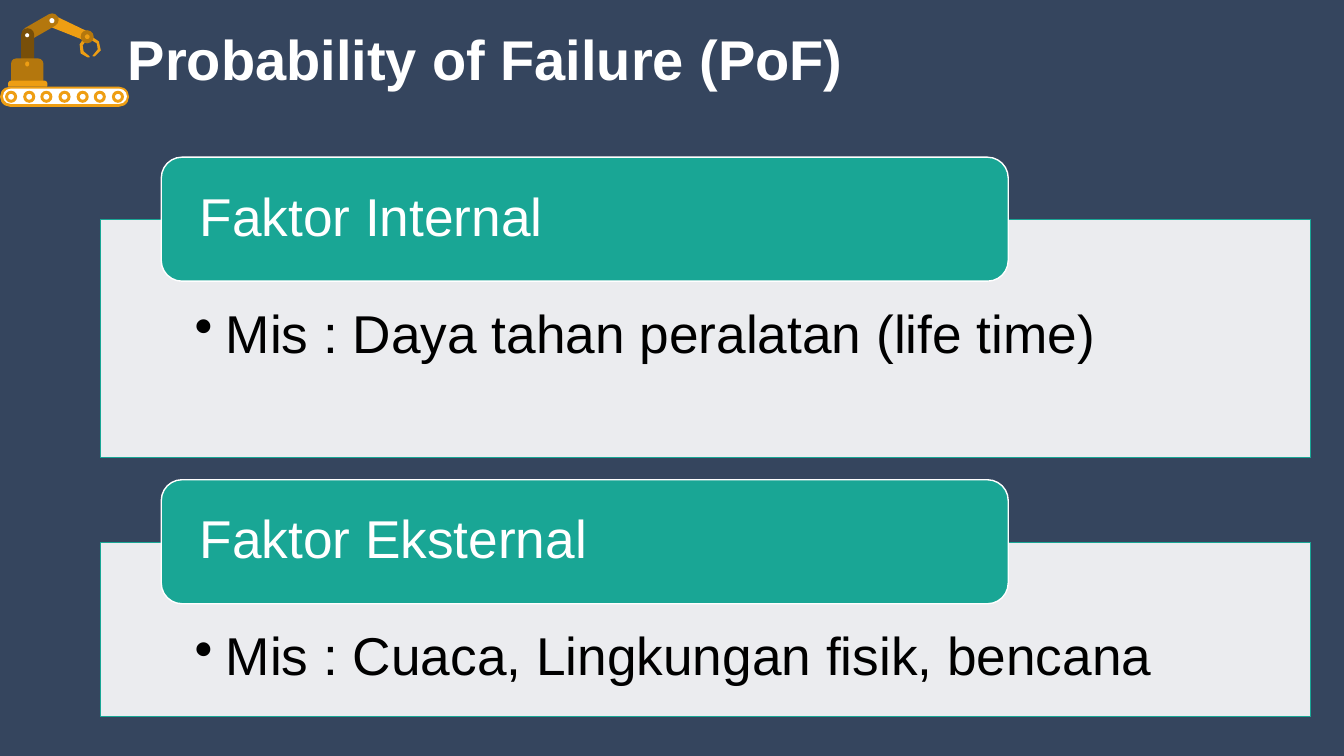
from dataclasses import dataclass

from lxml import etree
from pptx import Presentation
from pptx import util as u
from pptx.dml.color import RGBColor
from pptx.enum import shapes, text
from pptx.oxml.ns import qn
from pptx.shapes.autoshape import Shape
from pptx.shapes.shapetree import GroupShapes
from pptx.slide import Slide
from pptx.text.text import TextFrame

PX = 9144
FONT = "Arial"
NAVY, TEAL, WHITE, BLACK = "35455E", "19A695", "FFFFFF", "000000"
AMBER, BRONZE, BROWN = "EE9E13", "B4770D", "784F09"
Kind = shapes.MSO_SHAPE


@dataclass(frozen=True)
class Box:
    left: int
    top: int
    width: int
    height: int


@dataclass(frozen=True)
class Part:
    kind: Kind
    box: Box
    color: str
    adjustments: tuple[float, ...] = ()
    rotation: float = 0


@dataclass(frozen=True)
class Claw:
    points: tuple[tuple[int, int], ...]


@dataclass(frozen=True)
class Factor:
    heading: str
    example: str
    top: int
    panel_height: int


ARM = (
    Part(Kind.TRAPEZOID, Box(64, 8, 12, 42), AMBER, (0.12,), 113.7),
    Part(Kind.ROUNDED_RECTANGLE, Box(20, 20, 40, 13), BRONZE, (0.5,), 330),
    Part(Kind.OVAL, Box(49, 18, 5, 5), WHITE),
    Part(Kind.ROUND_2_SAME_RECTANGLE, Box(21, 28, 13, 39), BROWN, (0.5, 0)),
    Part(Kind.OVAL, Box(25, 33, 4, 4), WHITE),
)
CLAWS = (
    Claw(((92, 37), (98, 41), (100, 50), (94, 56), (92, 56),
          (92, 55), (97, 49), (96, 43), (91, 40))),
    Claw(((83, 38), (79, 44), (80, 53), (87, 57), (89, 57),
          (89, 56), (83, 51), (82, 45), (85, 41))),
)
BASE = (
    Part(Kind.DONUT, Box(80, 30, 13, 13), BRONZE, (0.31,)),
    Part(Kind.ROUND_2_SAME_RECTANGLE, Box(11, 58, 32, 25), BRONZE, (0.2, 0.08)),
    Part(Kind.ROUND_2_SAME_RECTANGLE, Box(8, 80, 39, 6), AMBER, (0.5, 0.15)),
    Part(Kind.OVAL, Box(25, 61, 4, 5), AMBER),
    Part(Kind.ROUNDED_RECTANGLE, Box(0, 86, 128, 20), AMBER, (0.5,)),
    Part(Kind.ROUNDED_RECTANGLE, Box(3, 88, 123, 15), WHITE, (0.5,)),
)
WHEELS = tuple(
    Part(Kind.DONUT, Box(round(5 + step * 106 / 6), 90, 12, 12), AMBER)
    for step in range(7)
)
FACTORS = (
    Factor("Faktor Internal", "Mis : Daya tahan peralatan (life time)", 156, 236),
    Factor("Faktor Eksternal", "Mis : Cuaca, Lingkungan fisik, bencana", 476, 173),
)


def rgb(color: str) -> RGBColor:
    return RGBColor.from_string(color)


def paint(shape: Shape, fill: str, line: str | None = None) -> None:
    shape.shadow.inherit = False
    shape.fill.solid()
    shape.fill.fore_color.rgb = rgb(fill)
    if line is None:
        shape.line.fill.background()
    else:
        shape.line.color.rgb = rgb(line)
        shape.line.width = u.Pt(1)


def add_part(tree: GroupShapes, part: Part, line: str | None = None) -> Shape:
    box = part.box
    shape = tree.add_shape(
        part.kind, box.left * PX, box.top * PX, box.width * PX, box.height * PX
    )
    for index, value in enumerate(part.adjustments):
        shape.adjustments[index] = value
    shape.rotation = part.rotation
    paint(shape, part.color, line)
    return shape


def add_claw(tree: GroupShapes, claw: Claw) -> None:
    start, *rest = claw.points
    builder = tree.build_freeform(*start, scale=PX)
    builder.add_line_segments(rest, close=True)
    paint(builder.convert_to_shape(), AMBER)


def add_robot(page: Slide) -> None:
    robot = page.shapes.add_group_shape().shapes
    for part in ARM:
        add_part(robot, part)
    for claw in CLAWS:
        add_claw(robot, claw)
    for part in BASE + WHEELS:
        add_part(robot, part)


def write(frame: TextFrame, words: str, size: int, color: str, bold: bool = False) -> None:
    frame.text = words
    para = frame.paragraphs[0]
    para.alignment = text.PP_ALIGN.LEFT
    font = para.runs[0].font
    font.name, font.size, font.bold = FONT, u.Pt(size), bold
    font.color.rgb = rgb(color)


def set_margins(frame: TextFrame, side: int, top: int, bottom: int) -> None:
    frame.word_wrap = True
    frame.margin_left = frame.margin_right = side * PX
    frame.margin_top, frame.margin_bottom = top * PX, bottom * PX


def add_bullet(frame: TextFrame, indent: int) -> None:
    para = frame.paragraphs[0]
    para.level = 1
    para.line_spacing = 0.9
    properties = para._p.get_or_add_pPr()
    properties.set("marL", str(indent * PX))
    properties.set("indent", str(-indent * PX))
    etree.SubElement(properties, qn("a:buChar"), char="•")


def add_factor(page: Slide, factor: Factor) -> None:
    panel_box = Box(100, factor.top + 62, 1200, factor.panel_height)
    panel = add_part(page.shapes, Part(Kind.RECTANGLE, panel_box, WHITE), TEAL)
    panel_color = panel._element.spPr.find(qn("a:solidFill"))[0]
    etree.SubElement(panel_color, qn("a:alpha"), val="90000")
    frame = panel.text_frame
    set_margins(frame, 93, 87, 30)
    frame.vertical_anchor = text.MSO_ANCHOR.TOP
    write(frame, factor.example, 38, BLACK)
    add_bullet(frame, 31)

    heading_box = Box(160, factor.top, 840, 123)
    heading = add_part(page.shapes, Part(Kind.ROUNDED_RECTANGLE, heading_box, TEAL), WHITE)
    frame = heading.text_frame
    set_margins(frame, 32, 0, 0)
    frame.vertical_anchor = text.MSO_ANCHOR.MIDDLE
    write(frame, factor.heading, 38, WHITE)
    frame.paragraphs[0].line_spacing = 0.9


def add_title(page: Slide) -> None:
    title = page.shapes.add_textbox(117 * PX, 19 * PX, 737 * PX, 77 * PX)
    frame = title.text_frame
    frame.word_wrap = False
    frame.auto_size = text.MSO_AUTO_SIZE.SHAPE_TO_FIT_TEXT
    write(frame, "Probability of Failure (PoF)", 40, WHITE, bold=True)


def main() -> None:
    """Build the Probability of Failure slide and save it."""
    deck = Presentation()
    deck.slide_width, deck.slide_height = 1333 * PX, 750 * PX
    page = deck.slides.add_slide(deck.slide_layouts[6])
    page.background.fill.solid()
    page.background.fill.fore_color.rgb = rgb(NAVY)
    add_title(page)
    add_robot(page)
    for factor in FACTORS:
        add_factor(page, factor)
    deck.save("out.pptx")


if __name__ == "__main__":
    main()
